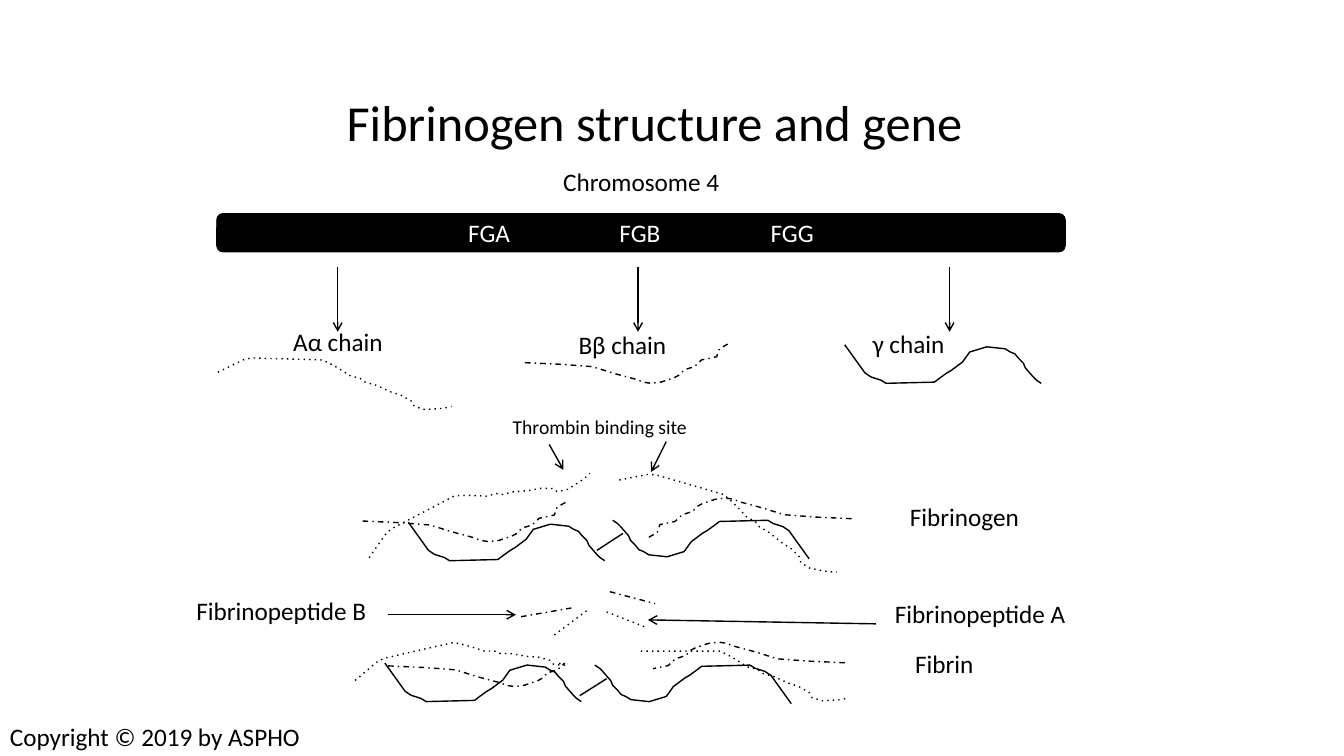
from lxml import etree
from pptx import Presentation
from pptx.dml.color import RGBColor
from pptx.enum.shapes import MSO_CONNECTOR, MSO_SHAPE
from pptx.enum.text import MSO_ANCHOR, PP_ALIGN
from pptx.oxml.ns import qn
from pptx.util import Cm, Pt

CENTER, LEFT = PP_ALIGN.CENTER, PP_ALIGN.LEFT
MIDDLE, TOP = MSO_ANCHOR.MIDDLE, MSO_ANCHOR.TOP
STRAIGHT = MSO_CONNECTOR.STRAIGHT
ROUNDED = MSO_SHAPE.ROUNDED_RECTANGLE

COLORS = {"ink": "000000", "paper": "FFFFFF"}
FONT = "Calibri"
DOT, DASH_DOT = "dot", "dashDot"

# Outlines of the three chains, in cm from the top left of each
ALPHA = [(0, .36), (.64, .05), (.84, 0), (2.64, .05), (2.9, .18), (3.2, .36),
         (3.28, .43), (3.45, .48), (3.58, .51), (3.71, .61), (3.99, .69),
         (4.37, .86), (4.62, .94), (4.88, 1.09), (4.95, 1.22), (5.21, 1.3),
         (5.69, 1.27), (5.89, 1.22)]
BETA = [(0, .48), (.9, .52), (1.7, .58), (2.21, .74), (2.39, .79), (2.84, .91),
        (2.97, .97), (3.18, 1), (3.43, .97), (3.76, .86), (3.89, .79),
        (4.01, .66), (4.27, .58), (4.45, .41), (4.83, .33), (4.9, .13),
        (5.13, 0)]
GAMMA = [(0, 0), (.51, .71), (.66, .81), (.91, .89), (1.04, .97), (2.26, .94),
         (2.39, .84), (2.57, .71), (2.69, .64), (2.97, .43), (3.15, .18),
         (3.58, .05), (4.04, .1), (4.17, .18), (4.29, .23), (4.37, .33),
         (4.5, .46), (4.55, .58), (4.75, .81), (4.83, .89), (4.95, .97)]

# Chains after thrombin has cut the fibrinopeptides off
ALPHA_CUT_LEFT = ALPHA[:-2] + [(5.05, 1.19)]
ALPHA_CUT_RIGHT = ALPHA[1:2] + ALPHA[3:]
BETA_CUT_LEFT = BETA[:-3]
BETA_CUT_RIGHT = BETA[:-2]

# Outline, dash, left, top, rotation
STRANDS = [
    # Single chains
    (ALPHA, DOT, 5.49, 9.02, 0),
    (BETA, DASH_DOT, 13.23, 8.66, 0),
    (GAMMA, None, 21.29, 8.69, 0),
    # Fibrinogen
    (ALPHA, DOT, 9.07, 12.22, 330.8),
    (BETA, DASH_DOT, 9.14, 12.65, 0),
    (GAMMA, None, 10.29, 13.16, 0),
    (GAMMA, None, 15.44, 13.11, 180),
    (ALPHA, DOT, 15.44, 12.47, 14.6),
    (BETA, DASH_DOT, 16.33, 12.55, 180),
    # Fibrin
    (ALPHA_CUT_LEFT, DOT, 8.94, 16.13, 345.6),
    (BETA_CUT_LEFT, DASH_DOT, 9.78, 16.71, 0),
    (GAMMA, None, 9.7, 16.71, 0),
    (GAMMA, None, 14.99, 16.76, 180),
    (BETA_CUT_RIGHT, DASH_DOT, 16.46, 16.18, 180),
    (ALPHA_CUT_RIGHT, DOT, 16.15, 16.41, 0),
]

# Start x, start y, end x, end y
ARROWS = [
    (13.84, 11.2, 14.2, 11.84),     # thrombin binding sites
    (16.79, 11.13, 16.41, 11.89),
    (22.07, 15.72, 16.33, 15.62),   # fibrinopeptide A
    (9.78, 15.49, 13, 15.49),       # fibrinopeptide B
]
GENE_ARROW_X = [8.51, 16.08, 23.93]
BRIDGES = [(15.04, 13.87, 15.7, 13.44), (14.61, 17.53, 15.29, 17.1)]
PEPTIDES = [
    (DOT, (13.97, 16, 14.81, 15.37)),
    (DOT, (15.29, 15.42, 16.26, 15.8)),
    (DASH_DOT, (13.13, 15.54, 14.4, 15.32)),
    (DASH_DOT, (15.37, 14.91, 16.51, 15.21)),
]

# Text, left, top, width
LABELS = [
    ("Aα chain", 7.14, 8.1, 4.11),
    ("Bβ chain", 14.33, 8.18, 4.62),
    ("γ chain", 21.74, 8.15, 4.75),
    ("Fibrinogen", 22.68, 12.52, 3.73),
    ("Fibrin", 22.81, 16.2, 3.73),
    ("Fibrinopeptide A", 22.3, 14.96, 5.64),
    ("Fibrinopeptide B", 4.7, 14.88, 5.64),
    ("Copyright © 2019 by ASPHO", 0, 18.06, 8.1),
]


def color(name):
    return RGBColor.from_string(COLORS[name])


def set_text(shape, text, size=18, align=LEFT, anchor=TOP, ink="ink"):
    frame = shape.text_frame
    frame.word_wrap = True
    frame.vertical_anchor = anchor
    paragraph = frame.paragraphs[0]
    paragraph.text = text
    paragraph.alignment = align
    for run in paragraph.runs:
        run.font.name = FONT
        run.font.size = Pt(size)
        run.font.color.rgb = color(ink)
    return paragraph


def add_label(slide, text, left, top, width, height=1.03, **style):
    box = slide.shapes.add_textbox(Cm(left), Cm(top), Cm(width), Cm(height))
    return set_text(box, text, **style)


def style_line(shape, dash=None, arrow=False):
    shape.line.color.rgb = color("ink")
    shape.line.width = Pt(1)
    outline = shape._element.spPr.find(qn("a:ln"))
    if dash:
        etree.SubElement(outline, qn("a:prstDash")).set("val", dash)
    if arrow:
        etree.SubElement(outline, qn("a:tailEnd")).set("type", "arrow")


def add_line(slide, ends, dash=None, arrow=False):
    connector = slide.shapes.add_connector(STRAIGHT, *(Cm(end) for end in ends))
    style_line(connector, dash, arrow)
    etree.SubElement(connector._element.spPr, qn("a:effectLst"))


def add_strand(slide, points, dash, left, top, rotation):
    min_x = min(x for x, y in points)
    min_y = min(y for x, y in points)
    outline = [(Cm(x - min_x), Cm(y - min_y)) for x, y in points]
    builder = slide.shapes.build_freeform(*outline[0])
    builder.add_line_segments(outline[1:], close=False)
    strand = builder.convert_to_shape(Cm(left), Cm(top))
    strand.rotation = rotation
    strand.shadow.inherit = False
    strand.fill.background()
    style_line(strand, dash)


def add_chromosome(slide):
    bar = slide.shapes.add_shape(ROUNDED, Cm(5.46), Cm(5.38), Cm(21.39), Cm(.97))
    bar.shadow.inherit = False
    bar.fill.solid()
    bar.fill.fore_color.rgb = color("ink")
    bar.line.color.rgb = color("ink")
    bar.line.width = Pt(.5)
    set_text(bar, "FGA\t\t\tFGB\t\t\tFGG", align=CENTER, anchor=MIDDLE, ink="paper")


def main():
    presentation = Presentation()
    presentation.slide_width, presentation.slide_height = Cm(33.87), Cm(19.05)
    slide = presentation.slides.add_slide(presentation.slide_layouts[6])

    # Title and chromosome with its genes
    title = add_label(slide, "Fibrinogen structure and gene", 4.65, 2.03, 23.7,
                      2.24, size=36, align=CENTER, anchor=MIDDLE)
    title.line_spacing = .9
    add_chromosome(slide)
    add_label(slide, "Chromosome 4", 5.49, 4.06, 21.34, align=CENTER)

    # Chains, bridges and cut peptides
    for strand in STRANDS:
        add_strand(slide, *strand)
    for bridge in BRIDGES:
        add_line(slide, bridge)
    for dash, ends in PEPTIDES:
        add_line(slide, ends, dash)

    # Arrows
    for x in GENE_ARROW_X:
        add_line(slide, (x, 6.73, x, 8.36), arrow=True)
    for ends in ARROWS:
        add_line(slide, ends, arrow=True)

    # Labels
    for label in LABELS:
        add_label(slide, *label)
    add_label(slide, "Thrombin binding site", 12.67, 10.34, 5.97, .86, size=14)

    presentation.save("out.pptx")


if __name__ == "__main__":
    main()
